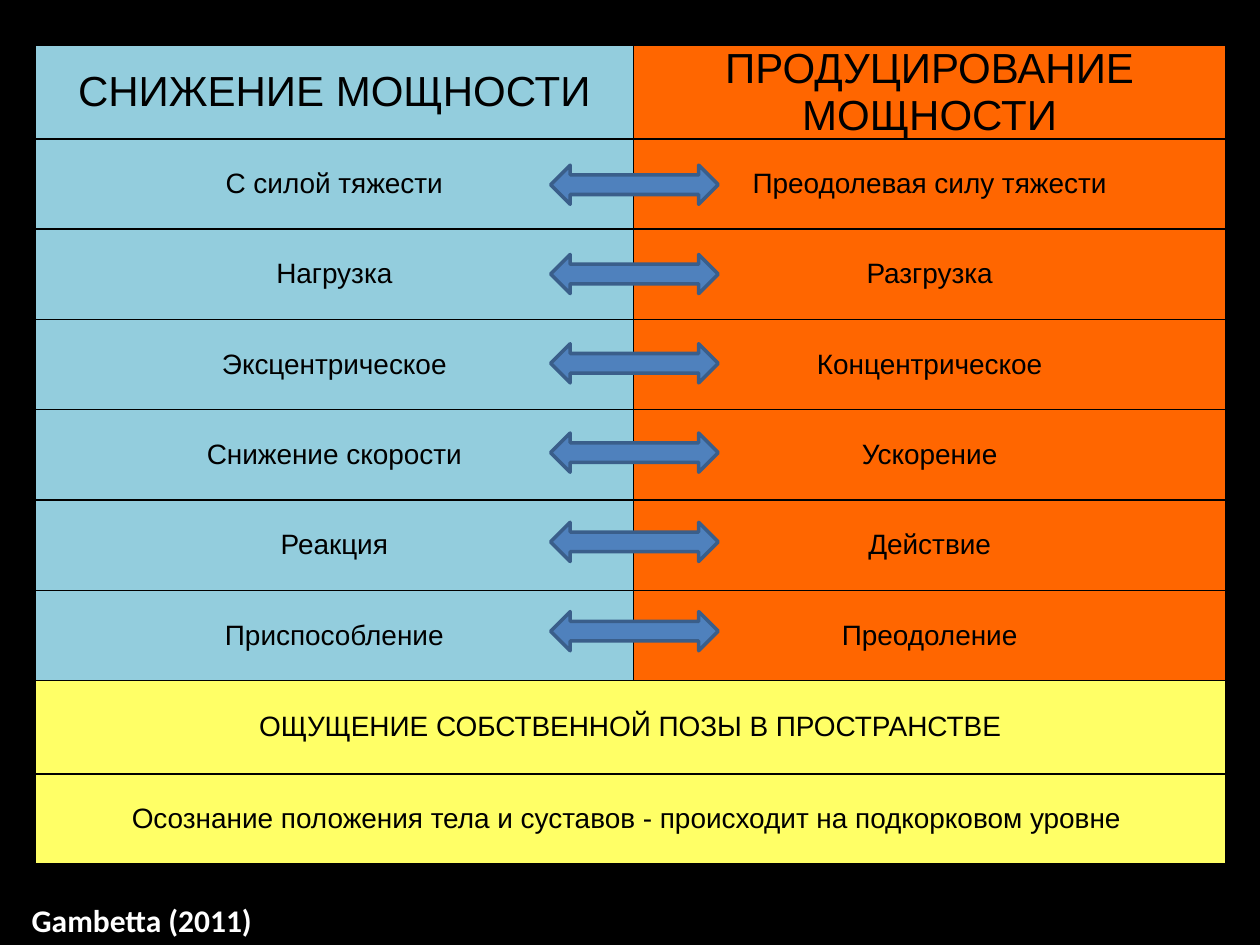
from lxml import etree
from pptx import Presentation
from pptx.dml.color import RGBColor
from pptx.enum.shapes import MSO_SHAPE
from pptx.enum.text import MSO_ANCHOR, MSO_AUTO_SIZE, PP_ALIGN
from pptx.oxml.ns import qn
from pptx.util import Cm, Pt

DOUBLE_ARROW = MSO_SHAPE.LEFT_RIGHT_ARROW
MIDDLE = MSO_ANCHOR.MIDDLE
LEFT, CENTER = PP_ALIGN.LEFT, PP_ALIGN.CENTER
FIT_SHAPE = MSO_AUTO_SIZE.SHAPE_TO_FIT_TEXT

BLACK, WHITE = "000000", "FFFFFF"
BLUE, ORANGE, YELLOW = "93CDDD", "FF6600", "FFFF66"
ARROW_FILL, ARROW_LINE = "4F81BD", "3A5E8A"

HEADINGS = ("СНИЖЕНИЕ МОЩНОСТИ", "ПРОДУЦИРОВАНИЕ МОЩНОСТИ")
OPPOSITES = [
    ("С силой тяжести", "Преодолевая силу тяжести"),
    ("Нагрузка", "Разгрузка"),
    ("Эксцентрическое", "Концентрическое"),
    ("Снижение скорости", "Ускорение"),
    ("Реакция", "Действие"),
    ("Приспособление", "Преодоление"),
]
SUMMARY = [
    "ОЩУЩЕНИЕ СОБСТВЕННОЙ ПОЗЫ В ПРОСТРАНСТВЕ",
    "Осознание положения тела и суставов - происходит на подкорковом уровне ",
]
COLUMN_WIDTHS = (12.06, 11.94)
ROW_HEIGHT, SUMMARY_HEIGHT = 1.82, 1.88


def paint(fill, color):
    fill.solid()
    fill.fore_color.rgb = RGBColor.from_string(color)


def write(frame, text, size=16, font="Arial", color=BLACK, bold=False,
          align=CENTER, margin=0):
    frame.margin_left = frame.margin_right = Cm(margin)
    frame.margin_top = frame.margin_bottom = Cm(margin)
    paragraph = frame.paragraphs[0]
    paragraph.alignment = align
    run = paragraph.add_run()
    run.text = text
    run.font.size = Pt(size)
    run.font.name = font
    run.font.bold = bold
    run.font.color.rgb = RGBColor.from_string(color)


def add_borders(cell, color=BLACK, width=1):
    properties = cell._tc.get_or_add_tcPr()
    # Border lines must come before the cell fill
    for position, side in enumerate(("a:lnL", "a:lnR", "a:lnT", "a:lnB")):
        line = etree.Element(qn(side), w=str(Pt(width)))
        fill = etree.SubElement(line, qn("a:solidFill"))
        etree.SubElement(fill, qn("a:srgbClr"), val=color)
        properties.insert(position, line)


def fill_cell(cell, text, color, size=16):
    cell.vertical_anchor = MIDDLE
    cell.margin_left = cell.margin_right = 0
    cell.margin_top = cell.margin_bottom = 0
    write(cell.text_frame, text, size=size)
    paint(cell.fill, color)


def add_comparison(slide):
    pairs = [HEADINGS] + OPPOSITES
    heights = [ROW_HEIGHT] * len(pairs) + [SUMMARY_HEIGHT, ROW_HEIGHT]
    table = slide.shapes.add_table(
        len(heights), len(COLUMN_WIDTHS), Cm(0.71), Cm(0.91),
        Cm(sum(COLUMN_WIDTHS)), Cm(sum(heights))).table
    for column, width in zip(table.columns, COLUMN_WIDTHS):
        column.width = Cm(width)
    for row, height in zip(table.rows, heights):
        row.height = Cm(height)

    # Opposite phases side by side
    for row, pair in enumerate(pairs):
        for column, (text, color) in enumerate(zip(pair, (BLUE, ORANGE))):
            fill_cell(table.cell(row, column), text, color,
                      size=24 if row == 0 else 16)

    # Summary across both columns
    for row, text in enumerate(SUMMARY, start=len(pairs)):
        table.cell(row, 0).merge(table.cell(row, 1))
        fill_cell(table.cell(row, 0), text, YELLOW)
        paint(table.cell(row, 1).fill, YELLOW)

    for cell in table.iter_cells():
        add_borders(cell)


def add_double_arrow(slide, top):
    arrow = slide.shapes.add_shape(
        DOUBLE_ARROW, Cm(11.1), Cm(top), Cm(3.38), Cm(0.79))
    arrow.shadow.inherit = False
    paint(arrow.fill, ARROW_FILL)
    paint(arrow.line.fill, ARROW_LINE)
    arrow.line.width = Pt(2)


def add_citation(slide):
    frame = slide.shapes.add_textbox(
        Cm(0.51), Cm(18.03), Cm(5.33), Cm(0.99)).text_frame
    frame.word_wrap = False
    frame.auto_size = FIT_SHAPE
    write(frame, "Gambetta (2011)", size=18, font="Calibri", color=WHITE,
          bold=True, align=LEFT, margin=0.13)


def main():
    presentation = Presentation()
    presentation.slide_width, presentation.slide_height = Cm(25.4), Cm(19.05)
    slide = presentation.slides.add_slide(presentation.slide_layouts[6])
    paint(slide.background.fill, BLACK)

    add_comparison(slide)
    add_citation(slide)
    # One arrow for each pair of opposites
    for index in range(len(OPPOSITES)):
        add_double_arrow(slide, 3.33 + 1.8 * index)

    presentation.save("out.pptx")


if __name__ == "__main__":
    main()
